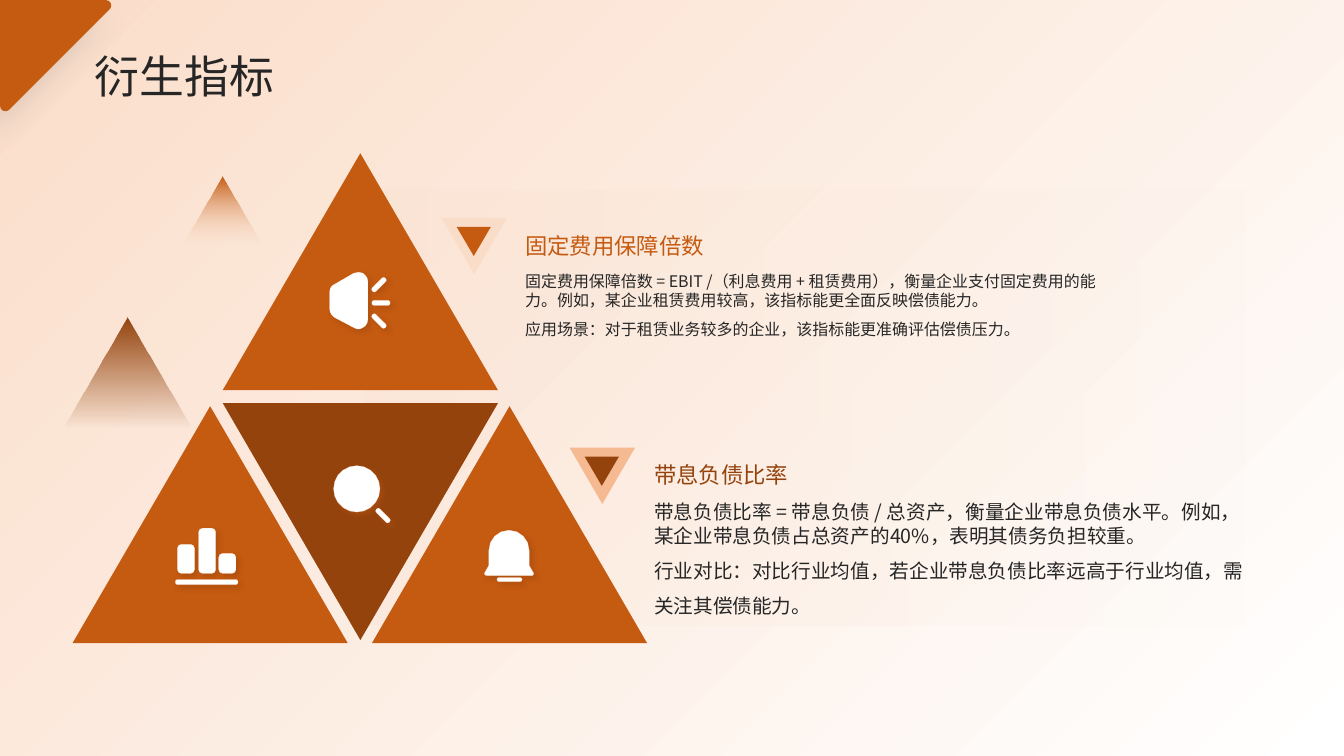
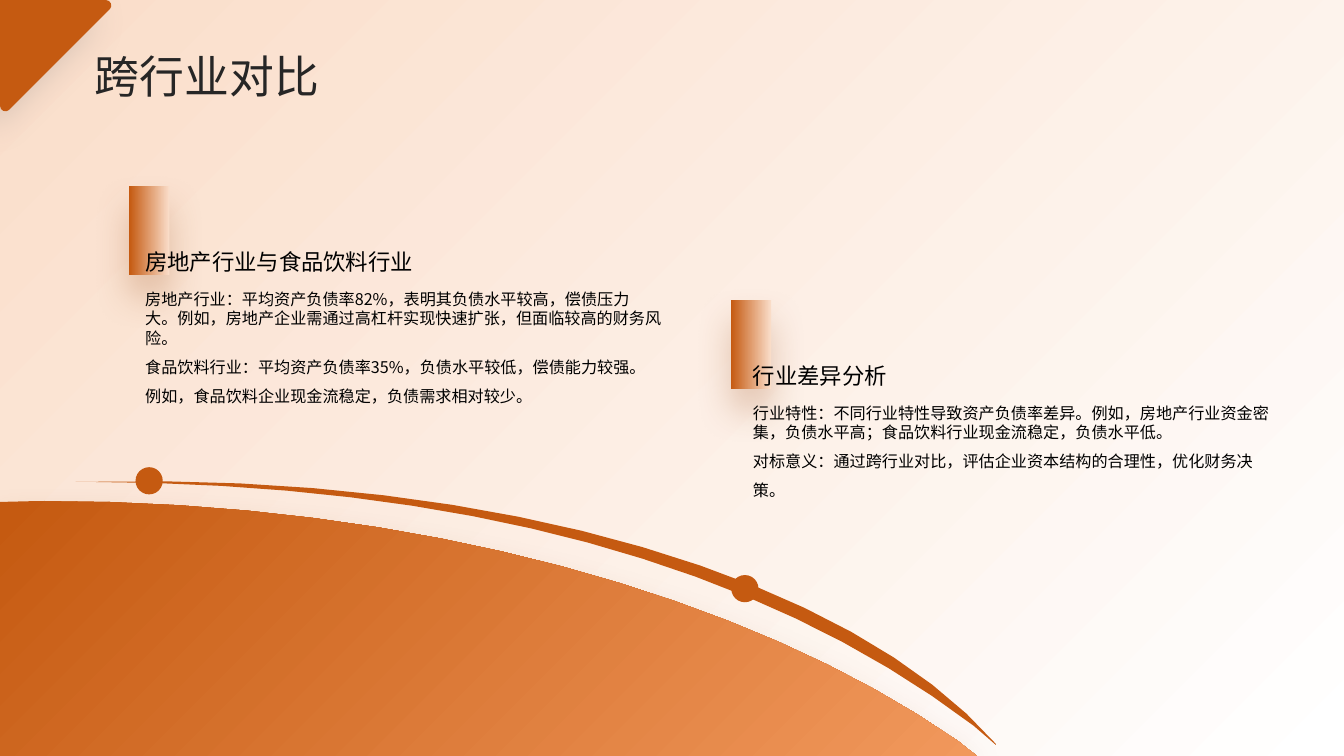
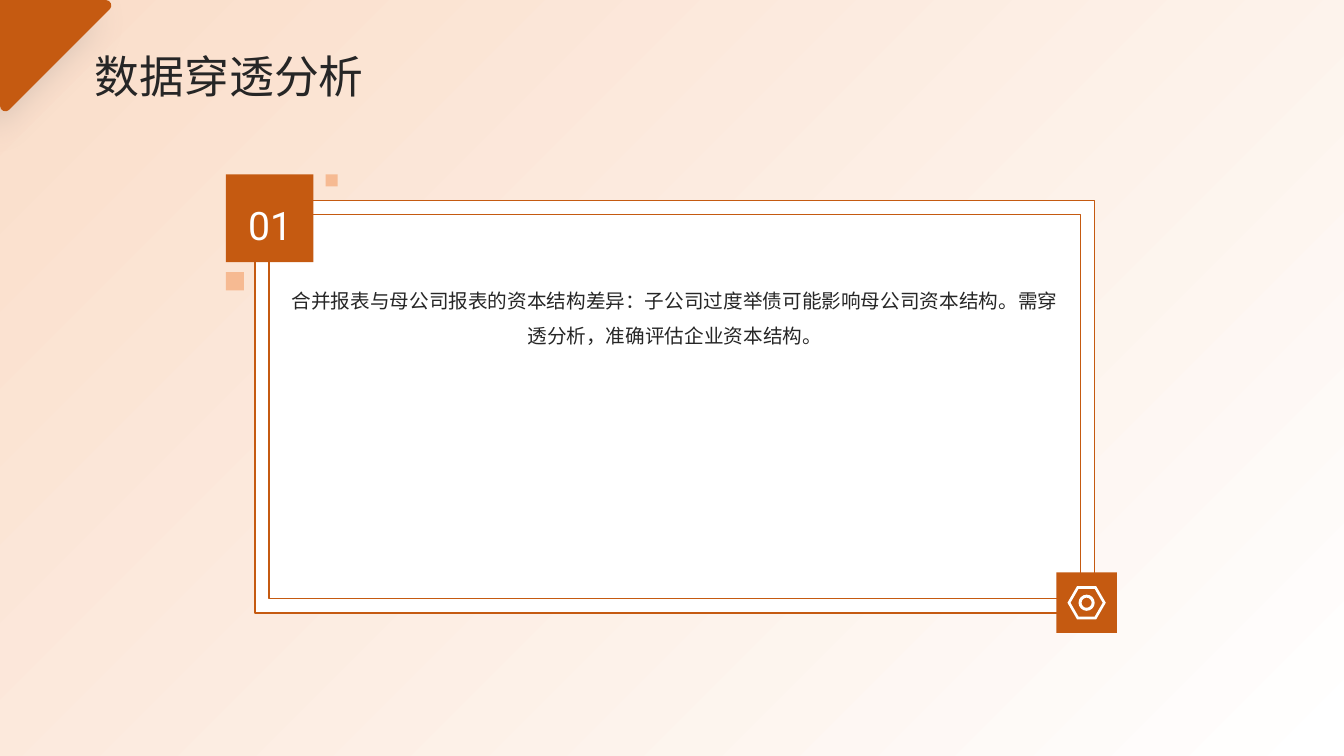
"""Build three slides on debt ratios and capital structure analysis."""
from dataclasses import dataclass
from math import cos, pi, radians, sin

from lxml.etree import SubElement
from pptx import Presentation
from pptx.dml.color import RGBColor
from pptx.enum.shapes import MSO_SHAPE
from pptx.enum.text import MSO_ANCHOR, MSO_AUTO_SIZE, PP_ALIGN
from pptx.oxml.ns import qn
from pptx.util import Inches, Pt

COLORS = {
    "accent": "C55A11",
    "dark": "94430D",
    "light": "F1985C",
    "soft": "F6BA92",
    "pale": "FADDC9",
    "white": "FFFFFF",
    "ink": "262626",
    "black": "000000",
    "gray": "808080",
}
CJK_FONT = "Noto Sans CJK SC"
SINGLE, WIDE = 1.2, 1.8
PAGE_WIDTH, PAGE_HEIGHT = 40 / 3, 7.5


@dataclass(frozen=True)
class Box:
    left: float
    top: float
    width: float
    height: float

    def lengths(self) -> tuple:
        return tuple(Inches(v) for v in (self.left, self.top, self.width, self.height))


@dataclass(frozen=True)
class Gradient:
    start: str
    end: str
    angle: int
    start_alpha: int = 100
    end_alpha: int = 100
    start_position: float = 0


@dataclass(frozen=True)
class Shadow:
    color: str
    alpha: int
    blur: int
    distance: int
    direction: int


@dataclass(frozen=True)
class TextBlock:
    box: Box
    lines: tuple
    size: float
    color: str
    leading: tuple
    anchor: MSO_ANCHOR = MSO_ANCHOR.TOP
    align: PP_ALIGN = PP_ALIGN.LEFT
    font: str = CJK_FONT


@dataclass(frozen=True)
class Topic:
    heading: TextBlock
    body: TextBlock


CORNER_SHADOW = Shadow("gray", 30, 25, 15, 135)
PANEL_SHADOW = Shadow("dark", 25, 26, 15, 90)
ICON_SHADOW = Shadow("dark", 40, 4, 3, 45)
ICON_LINE = ("pale", 0.15)


def rgb(name: str) -> RGBColor:
    return RGBColor.from_string(COLORS[name])


def add_alpha(color_node, percent: int) -> None:
    if percent < 100:
        SubElement(color_node, qn("a:alpha"), val=str(percent * 1000))


def paint_gradient(shape, gradient: Gradient) -> None:
    shape.fill.gradient()
    shape.fill.gradient_angle = gradient.angle
    first, last = shape.fill.gradient_stops
    first.color.rgb, last.color.rgb = rgb(gradient.start), rgb(gradient.end)
    first.position, last.position = gradient.start_position, 1
    nodes = list(shape.element.spPr.iter(qn("a:srgbClr")))
    for node, alpha in zip(nodes, (gradient.start_alpha, gradient.end_alpha)):
        add_alpha(node, alpha)


def style(shape, fill, line=None, shadow=None):
    shape.shadow.inherit = False
    if isinstance(fill, Gradient):
        paint_gradient(shape, fill)
    else:
        shape.fill.solid()
        shape.fill.fore_color.rgb = rgb(fill)
    if line:
        shape.line.color.rgb = rgb(line[0])
        shape.line.width = Pt(line[1])
    else:
        shape.line.fill.background()
    if shadow:
        effects = shape.element.spPr.find(qn("a:effectLst"))
        outer = SubElement(
            effects, qn("a:outerShdw"), blurRad=str(Pt(shadow.blur)),
            dist=str(Pt(shadow.distance)), dir=str(shadow.direction * 60000),
            algn="ctr", rotWithShape="0")
        add_alpha(SubElement(outer, qn("a:srgbClr"), val=COLORS[shadow.color]), shadow.alpha)
    return shape


def add_block(page, preset: MSO_SHAPE, box: Box, fill, line=None, shadow=None):
    return style(page.shapes.add_shape(preset, *box.lengths()), fill, line, shadow)


def add_outline(page, contours: list, fill, line=None, shadow=None):
    scaled = [[(Inches(x), Inches(y)) for x, y in contour] for contour in contours]
    builder = page.shapes.build_freeform(*scaled[0][0], scale=1.0)
    for index, points in enumerate(scaled):
        if index:
            builder.move_to(*points[0])
        builder.add_line_segments(points[1:], close=True)
    return style(builder.convert_to_shape(), fill, line, shadow)


def trace(start: tuple, *segments: tuple, steps: int = 3) -> list:
    points = [start]
    for segment in segments:
        if len(segment) == 2:
            points.append(segment)
            continue
        x0, y0 = points[-1]
        x1, y1, x2, y2, x3, y3 = segment
        for step in range(1, steps + 1):
            t = step / steps
            a, b, c, d = (1 - t) ** 3, 3 * t * (1 - t) ** 2, 3 * t * t * (1 - t), t ** 3
            points.append((a * x0 + b * x1 + c * x2 + d * x3,
                           a * y0 + b * y1 + c * y2 + d * y3))
    return points


def polygon(x: float, y: float, radius: float, sides: int) -> list:
    angles = [2 * pi * side / sides for side in range(sides)]
    return [(x + radius * cos(angle), y + radius * sin(angle)) for angle in angles]


def rounded(box: Box, radius: float, turn: float = 0) -> list:
    center_x, center_y = box.left + box.width / 2, box.top + box.height / 2
    cosine, sine = cos(radians(turn)), sin(radians(turn))
    points = []
    for quarter, (side_x, side_y) in enumerate(((1, 1), (-1, 1), (-1, -1), (1, -1))):
        for step in range(3):
            angle = radians(90 * quarter + 45 * step)
            x = side_x * (box.width / 2 - radius) + radius * cos(angle)
            y = side_y * (box.height / 2 - radius) + radius * sin(angle)
            points.append((center_x + x * cosine - y * sine, center_y + x * sine + y * cosine))
    return points


def stroke(x: float, y: float, turn: float) -> list:
    return rounded(Box(x - 0.09, y - 0.02, 0.18, 0.05), 0.02, turn)


def write(holder, block: TextBlock) -> None:
    holder.left, holder.top, holder.width, holder.height = block.box.lengths()
    frame = holder.text_frame
    frame_format = {
        "word_wrap": True, "auto_size": MSO_AUTO_SIZE.NONE, "vertical_anchor": block.anchor,
        "margin_left": 0, "margin_top": 0, "margin_right": 0, "margin_bottom": 0,
    }
    for name, value in frame_format.items():
        setattr(frame, name, value)
    for index, line in enumerate(block.lines):
        para = frame.add_paragraph() if index else frame.paragraphs[0]
        para_format = {
            "alignment": block.align, "space_before": Pt(0), "space_after": Pt(0),
            "line_spacing": Pt(round(block.size * block.leading[index], 1)),
        }
        for name, value in para_format.items():
            setattr(para, name, value)
        properties = para._p.get_or_add_pPr()
        for name in ("marL", "indent", "hangingPunct"):
            properties.set(name, "0")
        SubElement(properties, qn("a:buNone"))
        span = para.add_run()
        span.text = line
        for name, value in {"size": Pt(block.size), "bold": False, "name": block.font}.items():
            setattr(span.font, name, value)
        span.font.color.rgb = rgb(block.color)
        SubElement(span._r.get_or_add_rPr(), qn("a:ea"), typeface=block.font)


def fill_placeholder(page, index: int, block: TextBlock) -> None:
    holder = next(item for item in page.placeholders if item.placeholder_format.idx == index)
    holder.element.getparent().append(holder.element)
    write(holder, block)


def add_page(deck, layout_index: int, title: str):
    page = deck.slides.add_slide(deck.slide_layouts[layout_index])
    add_block(page, MSO_SHAPE.RECTANGLE, Box(0, 0, PAGE_WIDTH, PAGE_HEIGHT),
              Gradient("white", "pale", 135))
    corner = trace((0, 0), (1.05, 0), (1.1, 0, 1.12, 0.06, 1.09, 0.09),
                   (0.09, 1.09), (0.06, 1.12, 0, 1.1, 0, 1.05), steps=4)
    add_outline(page, [corner], "accent", shadow=CORNER_SHADOW)
    fill_placeholder(page, 0, TextBlock(
        Box(0.94, 0.46, 11.56, 0.47), (title,), 32, "ink", (1.44,), MSO_ANCHOR.MIDDLE))
    return page


def add_topics(page, topics: tuple) -> None:
    for number, topic in enumerate(topics):
        fill_placeholder(page, 2 * number + 1, topic.heading)
        fill_placeholder(page, 2 * number + 2, topic.body)


def derived_topic(left, top, heading, color, size, lines) -> Topic:
    return Topic(
        TextBlock(Box(left, top, 5.94, 0.76), (heading,), 16, color, (1.32,), MSO_ANCHOR.BOTTOM),
        TextBlock(Box(left, top + 0.88, 5.94, 1.39), lines, size, "ink", (SINGLE, WIDE)))


def industry_topic(left, top, heading, lines) -> Topic:
    return Topic(
        TextBlock(Box(left, top, 5.12, 0.68), (heading,), 16, "black", (1.56,), MSO_ANCHOR.BOTTOM),
        TextBlock(Box(left, top + 0.82, 5.12, 1.46), lines, 11.5, "black", (SINGLE, WIDE)))


def add_icons(page) -> None:
    speaker = trace(
        (3.56, 2.7), (3.6, 2.71), (3.63, 2.73, 3.65, 2.76, 3.65, 2.79),
        (3.65, 3.17), (3.65, 3.2, 3.63, 3.24, 3.6, 3.25), (3.57, 3.27, 3.54, 3.27, 3.51, 3.25),
        (3.32, 3.15), (3.29, 3.13, 3.27, 3.1, 3.27, 3.06), (3.27, 2.9),
        (3.27, 2.86, 3.29, 2.83, 3.32, 2.82), (3.51, 2.71))
    rays = [stroke(3.76, 3.18, 45), stroke(3.78, 3, 0), stroke(3.76, 2.82, -45)]
    lens = [polygon(3.54, 4.85, 0.23, 20), stroke(3.8, 5.11, 45)]
    chart = [rounded(Box(1.74, 5.75, 0.62, 0.05), 0.02)]
    for left, height in ((1.76, 0.29), (1.97, 0.45), (2.17, 0.2)):
        chart.append(rounded(Box(left, 5.69 - height, 0.17, height), 0.04))
    bell = trace(
        (5.05, 5.26), (5.16, 5.26, 5.25, 5.35, 5.25, 5.46), (5.25, 5.61), (5.29, 5.68),
        (5.3, 5.69, 5.29, 5.71, 5.28, 5.71), (4.83, 5.71),
        (4.81, 5.71, 4.8, 5.69, 4.81, 5.68), (4.85, 5.61), (4.85, 5.46),
        (4.85, 5.35, 4.94, 5.26, 5.05, 5.26), steps=4)
    clapper = rounded(Box(4.93, 5.73, 0.25, 0.04), 0.02)
    lens_shadow = Shadow("accent", 40, 4, 3, 45)
    for contours, shadow in (([speaker, *rays], ICON_SHADOW), (lens, lens_shadow),
                             (chart, ICON_SHADOW), ([bell, clapper], ICON_SHADOW)):
        add_outline(page, contours, "white", ICON_LINE, shadow)


def build_derived_page(deck) -> None:
    page = add_page(deck, 4, "衍生指标")
    add_block(page, MSO_SHAPE.RECTANGLE, Box(3.62, 1.88, 8.99, 4.33),
              Gradient("pale", "pale", 0, 20, 0))
    triangles = (
        (Box(2.21, 4, 2.73, 2.35), "dark", 180),
        (Box(3.69, 4.03, 2.73, 2.35), "accent", 0),
        (Box(0.72, 4.03, 2.73, 2.35), "accent", 0),
        (Box(2.21, 1.52, 2.73, 2.35), "accent", 0),
        (Box(4.38, 2.16, 0.65, 0.56), "pale", 180),
        (Box(4.53, 2.25, 0.34, 0.29), "accent", 180),
        (Box(5.65, 4.44, 0.65, 0.56), "soft", 180),
        (Box(5.8, 4.53, 0.34, 0.29), "dark", 180),
        (Box(1.8, 1.75, 0.81, 0.7), Gradient("accent", "pale", 270, 100, 0), 0),
        (Box(0.63, 3.15, 1.27, 1.09), Gradient("dark", "dark", 270, 100, 0), 0),
    )
    for box, fill, turn in triangles:
        add_block(page, MSO_SHAPE.ISOSCELES_TRIANGLE, box, fill).rotation = turn
    add_icons(page)
    add_topics(page, (
        derived_topic(5.21, 1.81, "固定费用保障倍数", "accent", 11.4, (
            "固定费用保障倍数 = EBIT /（利息费用 + 租赁费用），衡量企业支付固定费用的能力。"
            "例如，某企业租赁费用较高，该指标能更全面反映偿债能力。",
            "应用场景：对于租赁业务较多的企业，该指标能更准确评估偿债压力。")),
        derived_topic(6.49, 4.08, "带息负债比率", "dark", 14, (
            "带息负债比率 = 带息负债 / 总资产，衡量企业带息负债水平。"
            "例如，某企业带息负债占总资产的40%，表明其债务负担较重。",
            "行业对比：对比行业均值，若企业带息负债比率远高于行业均值，需关注其偿债能力。")),
    ))


def build_industry_page(deck) -> None:
    page = add_page(deck, 4, "跨行业对比")
    for left, top in ((1.28, 1.85), (7.25, 2.98)):
        add_block(page, MSO_SHAPE.RECTANGLE, Box(left, top, 0.4, 0.88),
                  Gradient("accent", "pale", 0, start_position=0.01), shadow=PANEL_SHADOW)
    hill = trace((0.41, 4.97), (4.13, 4.97, 7.43, 5.91, 9.5, 7.35),
                 (9.69, 7.5), (0, 7.5), (0, 4.98), steps=16)
    add_outline(page, [hill], Gradient("accent", "light", 315, start_position=0.01),
                shadow=PANEL_SHADOW)
    ribbon = trace((0.75, 4.78), (0.88, 4.78), (4.96, 4.68, 8.45, 5.74, 9.88, 7.38),
                   (9.88, 7.39), (9.66, 7.2), (7.51, 5.57, 4.54, 4.79, 0.84, 4.78), steps=16)
    add_outline(page, [ribbon], "accent")
    for center_x, center_y in ((7.39, 5.84), (1.48, 4.77)):
        for size in (0.27, 0.08):
            add_block(page, MSO_SHAPE.OVAL,
                      Box(center_x - size / 2, center_y - size / 2, size, size), "accent")
    add_topics(page, (
        industry_topic(1.44, 2.05, "房地产行业与食品饮料行业", (
            "房地产行业：平均资产负债率82%，表明其负债水平较高，偿债压力大。"
            "例如，房地产企业需通过高杠杆实现快速扩张，但面临较高的财务风险。",
            "食品饮料行业：平均资产负债率35%，负债水平较低，偿债能力较强。"
            "例如，食品饮料企业现金流稳定，负债需求相对较少。")),
        industry_topic(7.47, 3.18, "行业差异分析", (
            "行业特性：不同行业特性导致资产负债率差异。"
            "例如，房地产行业资金密集，负债水平高；食品饮料行业现金流稳定，负债水平低。",
            "对标意义：通过跨行业对比，评估企业资本结构的合理性，优化财务决策。")),
    ))


def build_consolidated_page(deck) -> None:
    page = add_page(deck, 1, "数据穿透分析")
    blocks = (
        (Box(2.53, 1.99, 8.33, 4.09), "white", ("accent", 1)),
        (Box(2.67, 2.13, 8.05, 3.81), "white", ("accent", 1)),
        (Box(2.24, 1.73, 0.87, 0.87), "accent", None),
        (Box(10.48, 5.68, 0.6, 0.6), "accent", None),
        (Box(3.23, 1.73, 0.12, 0.12), "soft", None),
        (Box(2.24, 2.7, 0.18, 0.18), "soft", None),
    )
    for box, fill, line in blocks:
        add_block(page, MSO_SHAPE.RECTANGLE, box, fill, line)
    number = TextBlock(Box(2.36, 1.88, 0.64, 0.58), ("01",), 28, "white", (1.52,),
                       MSO_ANCHOR.MIDDLE, PP_ALIGN.CENTER, "Roboto")
    write(page.shapes.add_textbox(*number.box.lengths()), number)
    fill_placeholder(page, 1, TextBlock(
        Box(2.88, 2.75, 7.63, 2.8),
        ("合并报表与母公司报表的资本结构差异：子公司过度举债可能影响母公司资本结构。"
         "需穿透分析，准确评估企业资本结构。",),
        14, "ink", (WIDE,), align=PP_ALIGN.CENTER))
    rings = ((0.19, 6), (0.16, 6), (0.08, 16), (0.05, 16))
    add_outline(page, [polygon(10.78, 5.98, radius, sides) for radius, sides in rings], "white")


def main() -> None:
    deck = Presentation()
    deck.slide_width, deck.slide_height = Inches(PAGE_WIDTH), Inches(PAGE_HEIGHT)
    build_derived_page(deck)
    build_industry_page(deck)
    build_consolidated_page(deck)
    deck.save("out.pptx")


if __name__ == "__main__":
    main()
